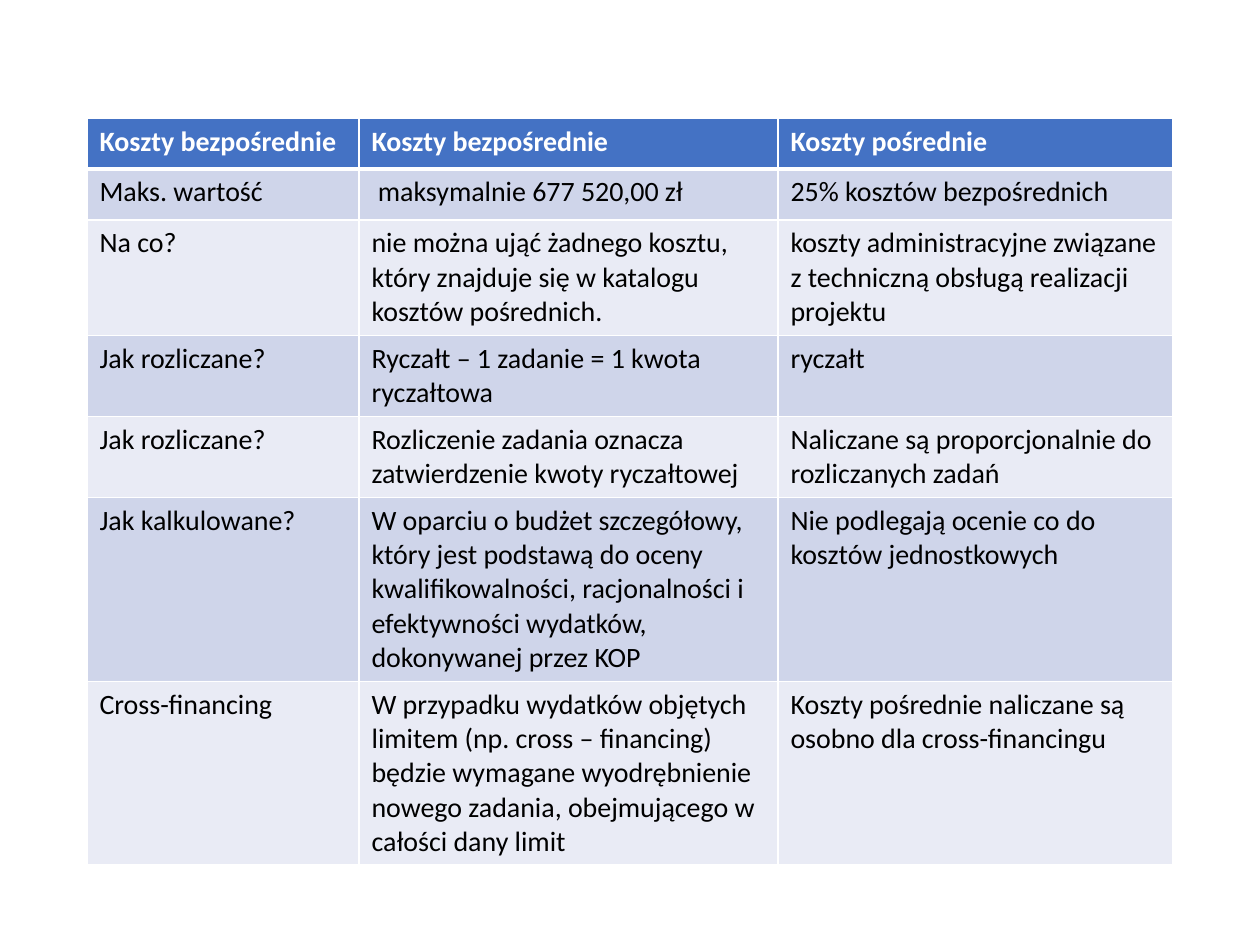
from lxml.etree import SubElement
from pptx import Presentation
from pptx.dml.color import RGBColor
from pptx.oxml.ns import qn
from pptx.util import Emu, Pt

EMU_PER_PX = 914400 / 126

WHITE = RGBColor(0xFF, 0xFF, 0xFF)
BLACK = RGBColor(0x00, 0x00, 0x00)
HEADER_BLUE = RGBColor(0x44, 0x72, 0xC4)
BAND_DARK = RGBColor(0xCF, 0xD5, 0xEA)
BAND_LIGHT = RGBColor(0xE9, 0xEB, 0xF5)

HEADER_FONT = {"name": "Calibri", "size": Pt(16), "bold": True}
BODY_FONT = {**HEADER_FONT, "bold": False}

COLUMN_WIDTHS = [272, 419, 395]
ROW_HEIGHT = 51

COST_ROWS = [
    ["Koszty bezpośrednie", "Koszty bezpośrednie", "Koszty pośrednie"],
    ["Maks. wartość", " maksymalnie 677 520,00 zł", "25% kosztów bezpośrednich"],
    ["Na co?",
     "nie można ująć żadnego kosztu, który znajduje się w katalogu kosztów pośrednich.",
     "koszty administracyjne związane z techniczną obsługą realizacji projektu"],
    ["Jak rozliczane?", "Ryczałt – 1 zadanie = 1 kwota ryczałtowa", "ryczałt"],
    ["Jak rozliczane?",
     "Rozliczenie zadania oznacza zatwierdzenie kwoty ryczałtowej",
     "Naliczane są proporcjonalnie do rozliczanych zadań"],
    ["Jak kalkulowane?",
     "W oparciu o budżet szczegółowy, który jest podstawą do oceny kwalifikowalności, "
     "racjonalności i efektywności wydatków, dokonywanej przez KOP",
     "Nie podlegają ocenie co do kosztów jednostkowych"],
    ["Cross-financing",
     "W przypadku wydatków objętych limitem (np. cross – financing) będzie wymagane "
     "wyodrębnienie nowego zadania, obejmującego w całości dany limit",
     "Koszty pośrednie naliczane są osobno dla cross-financingu"],
]


def px(length):
    return Emu(round(length * EMU_PER_PX))


def set_borders(cell, widths):
    """Draw white cell borders; must run before the cell is filled."""
    properties = cell._tc.get_or_add_tcPr()
    for side, width in widths.items():
        line = SubElement(properties, qn(f"a:ln{side}"), w=str(Pt(width)))
        solid_fill = SubElement(line, qn("a:solidFill"))
        SubElement(solid_fill, qn("a:srgbClr"), val=str(WHITE))


def format_cell(cell, text, fill, color, font_format, borders):
    set_borders(cell, borders)
    cell.fill.solid()
    cell.fill.fore_color.rgb = fill
    cell.text = text
    font = cell.text_frame.paragraphs[0].runs[0].font
    for attribute, value in font_format.items():
        setattr(font, attribute, value)
    font.color.rgb = color


def add_cost_table(slide, left, top, width, height):
    table = slide.shapes.add_table(
        len(COST_ROWS), len(COLUMN_WIDTHS), px(left), px(top), px(width), px(height)
    ).table
    for column, column_width in zip(table.columns, COLUMN_WIDTHS):
        column.width = px(column_width)

    for row_index, texts in enumerate(COST_ROWS):
        table.rows[row_index].height = px(ROW_HEIGHT)
        # Header row, then alternating bands
        is_header = row_index == 0
        band = BAND_DARK if row_index % 2 else BAND_LIGHT
        fill, color, font_format = (
            (HEADER_BLUE, WHITE, HEADER_FONT) if is_header else (band, BLACK, BODY_FONT)
        )
        # Thick line between header and body
        borders = {"L": 1, "R": 1, "T": 3 if row_index == 1 else 1, "B": 3 if is_header else 1}
        for column_index, text in enumerate(texts):
            cell = table.cell(row_index, column_index)
            format_cell(cell, text, fill, color, font_format, borders)


def main():
    presentation = Presentation()
    presentation.slide_width = px(1260)
    presentation.slide_height = px(945)
    slide = presentation.slides.add_slide(presentation.slide_layouts[6])
    add_cost_table(slide, 87, 118, sum(COLUMN_WIDTHS), ROW_HEIGHT * len(COST_ROWS))
    presentation.save("out.pptx")


if __name__ == "__main__":
    main()
